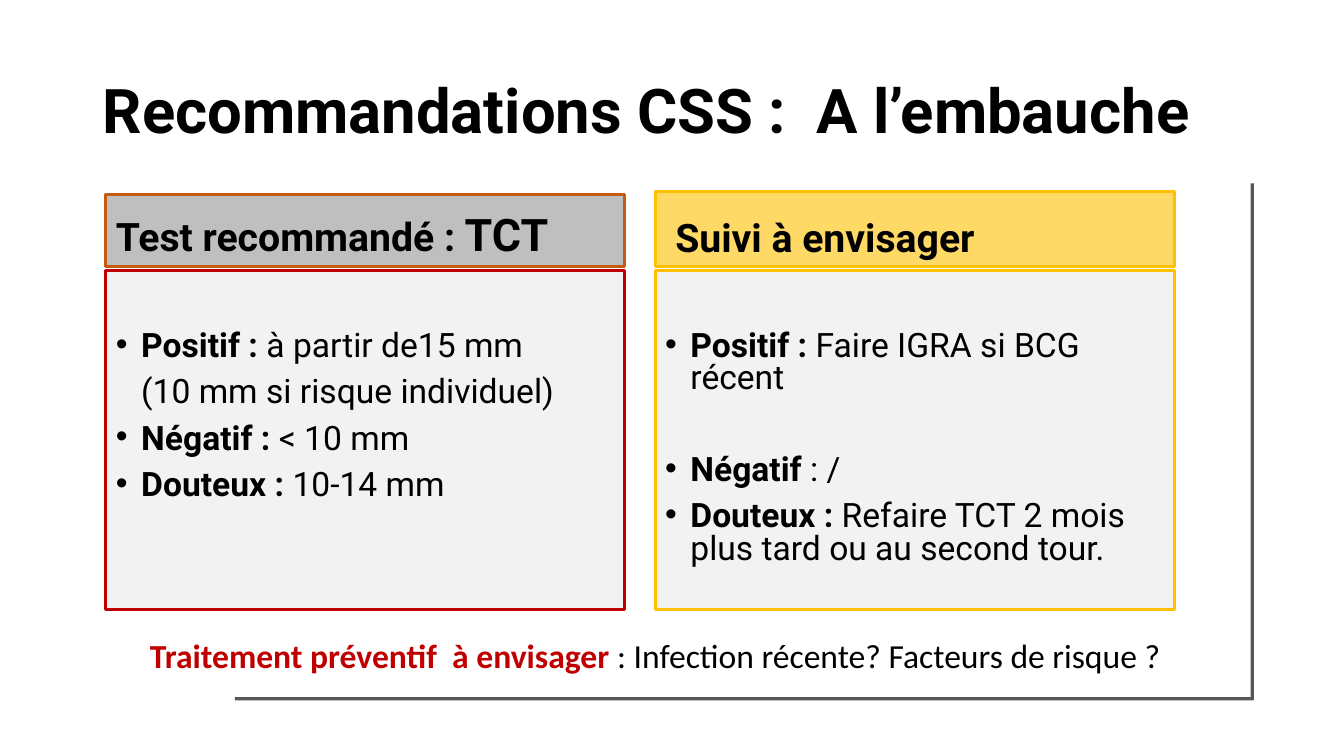
from lxml.etree import SubElement
from pptx import Presentation
from pptx.dml.color import RGBColor
from pptx.enum.shapes import MSO_SHAPE
from pptx.enum.text import MSO_ANCHOR, PP_ALIGN
from pptx.oxml.ns import qn
from pptx.util import Cm, Pt

BLACK = RGBColor(0, 0, 0)
RED = RGBColor(0xC0, 0, 0)
ORANGE = RGBColor(0xC5, 0x5A, 0x11)
GOLD = RGBColor(0xFF, 0xC0, 0)
LIGHT_GOLD = RGBColor(0xFF, 0xD9, 0x66)
GREY = RGBColor(0xBF, 0xBF, 0xBF)
PALE_GREY = RGBColor(0xF2, 0xF2, 0xF2)
FRAME_GREY = RGBColor(0x58, 0x58, 0x5A)


def add_run(p, text, size, bold, color=BLACK, font="Roboto"):
    r = p.add_run()
    r.text = text
    r.font.name = font
    r.font.size = Pt(size)
    r.font.bold = bold
    r.font.color.rgb = color


def add_panel(left, top, height, fill, line, anchor):
    """Add an outlined rectangle of column width and return its text frame."""
    sp = s.shapes.add_shape(MSO_SHAPE.RECTANGLE, Cm(left), Cm(top), Cm(13.08), Cm(height))
    sp.shadow.inherit = False
    sp.fill.solid()
    sp.fill.fore_color.rgb = fill
    sp.line.color.rgb = line
    sp.line.width = Pt(2.25)
    tf = sp.text_frame
    tf.word_wrap = True
    tf.vertical_anchor = anchor
    return tf


prs = Presentation()
prs.slide_width, prs.slide_height = Cm(33.87), Cm(19.05)
s = prs.slides.add_slide(prs.slide_layouts[6])

# Thin corner frame along the right and bottom
left, top, right, bottom, thick = Cm(5.92), Cm(4.62), Cm(31.6), Cm(17.65), Cm(0.08)
outline = s.shapes.build_freeform(right, top)
outline.add_line_segments([
    (right, bottom), (left, bottom), (left, bottom - thick),
    (right - thick, bottom - thick), (right - thick, top),
])
frame = outline.convert_to_shape()
frame.shadow.inherit = False
frame.fill.solid()
frame.fill.fore_color.rgb = FRAME_GREY
frame.line.fill.background()

# Title
tf = s.shapes.add_textbox(Cm(2.34), Cm(1.02), Cm(29.21), Cm(3.68)).text_frame
tf.word_wrap = True
tf.vertical_anchor = MSO_ANCHOR.MIDDLE
p = tf.paragraphs[0]
p.line_spacing = 0.9
add_run(p, "Recommandations CSS :  A l’embauche", 44, True)

# Columns: left, header top, header fill, header line, header indent, body line,
# header runs (text, size), body items (bold label, text, space before)
columns = [
    (2.67, 4.9, GREY, ORANGE, 0.25, RED,
     [("Test recommandé : ", 28), ("TCT", 32)],
     [("Positif : ", "à partir de15 mm", 0),
      ("", "(10 mm si risque individuel)", 10),
      ("Négatif : ", "< 10 mm", 10),
      ("Douteux : ", "10-14 mm", 10)]),
    (16.51, 4.83, LIGHT_GOLD, GOLD, 0.51, GOLD,
     [("Suivi à envisager", 28)],
     [("Positif : ", "Faire IGRA si BCG récent", 0),
      ("Négatif ", ": /", 42.5),
      ("Douteux : ", "Refaire TCT 2 mois plus tard ou au second tour.", 10)]),
]
for left, top, fill, line, indent, body_line, header, items in columns:
    tf = add_panel(left, 6.81, 8.56, PALE_GREY, body_line, MSO_ANCHOR.TOP)
    tf.margin_top = Cm(1.55)
    for i, (label, text, before) in enumerate(items):
        p = tf.add_paragraph() if i else tf.paragraphs[0]
        p.alignment = PP_ALIGN.LEFT
        p.line_spacing = 0.8
        p.space_before = Pt(before)
        pPr = p._p.get_or_add_pPr()
        pPr.set("marL", str(Cm(0.64)))
        if label:
            pPr.set("indent", str(Cm(-0.64)))
            SubElement(pPr, qn("a:buFont"), typeface="Arial")
            SubElement(pPr, qn("a:buChar"), char="•")
            add_run(p, label, 24, True)
        add_run(p, text, 24, False)

    tf = add_panel(left, top, 6.71 - top, fill, line, MSO_ANCHOR.BOTTOM)
    tf.margin_left = Cm(indent)
    p = tf.paragraphs[0]
    p.alignment = PP_ALIGN.LEFT
    p.line_spacing = 0.9
    for text, size in header:
        add_run(p, text, size, True)

# Closing remark
tf = s.shapes.add_textbox(Cm(3.53), Cm(15.88), Cm(26.8), Cm(1.27)).text_frame
tf.word_wrap = True
p = tf.paragraphs[0]
add_run(p, "Traitement préventif  à envisager ", 24, True, RED, "Calibri")
add_run(p, ": Infection récente? Facteurs de risque ?", 24, False, BLACK, "Calibri")

prs.save("out.pptx")
